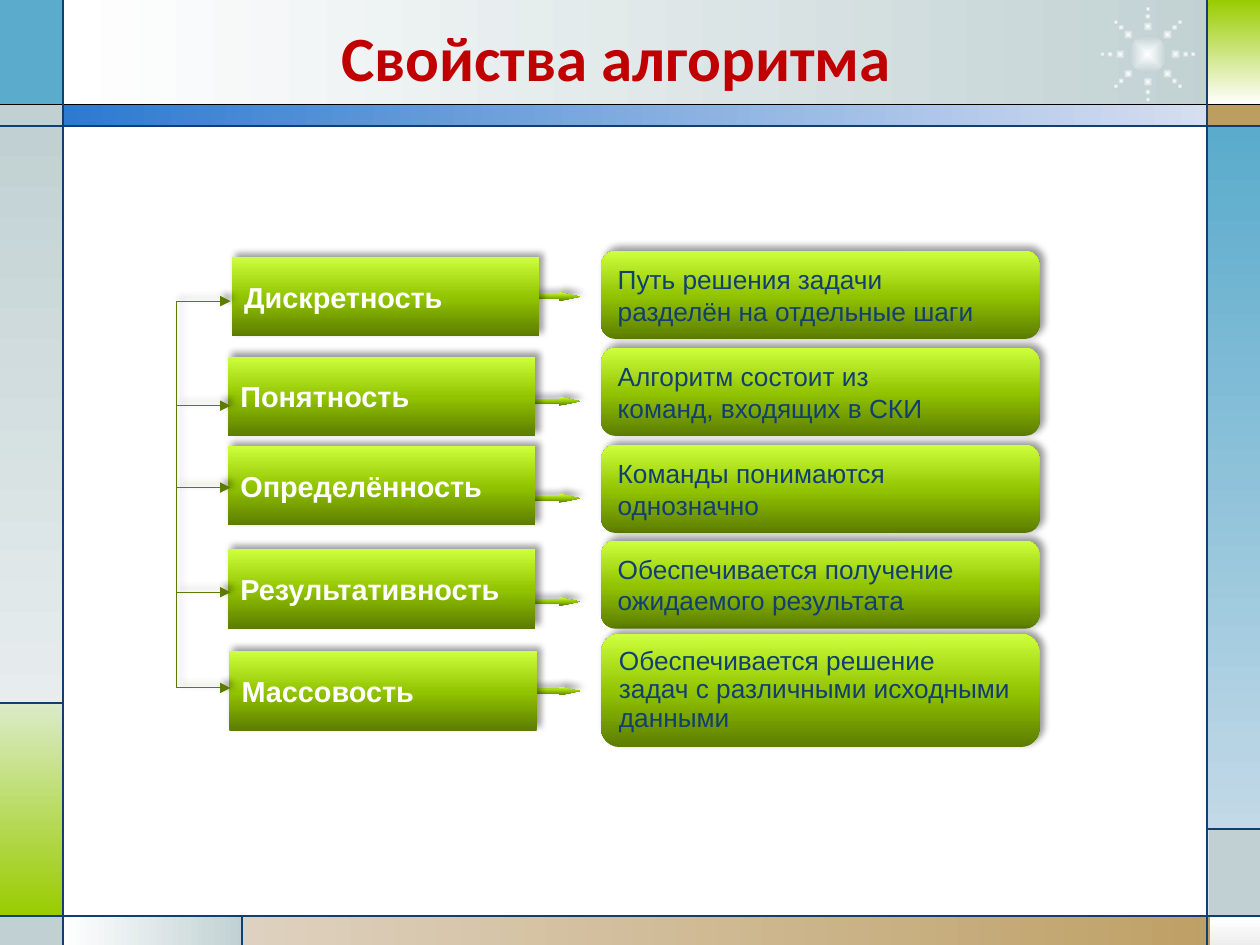
"""Build a slide that lists the properties of an algorithm."""
from math import cos, radians, sin

from lxml.etree import SubElement as Sub
from pptx import Presentation
from pptx.dml.color import RGBColor as RGB
from pptx.enum.shapes import MSO_CONNECTOR as LINK, MSO_SHAPE as KIND
from pptx.enum.text import MSO_ANCHOR as ANCHOR, PP_ALIGN as ALIGN
from pptx.oxml.ns import qn
from pptx.util import Inches, Pt

WHITE = RGB(0xFF, 0xFF, 0xFF)
BLACK = RGB(0x00, 0x00, 0x00)
GRAY = RGB(0xC1, 0xD1, 0xD3)
MIST = RGB(0xE7, 0xED, 0xEE)
PEARL = RGB(0xED, 0xED, 0xED)
SKY = RGB(0x5A, 0xAB, 0xCC)
PALE = RGB(0xC2, 0xD9, 0xE7)
BLUE = RGB(0x2D, 0x7A, 0xCF)
ICE = RGB(0xD7, 0xDE, 0xF0)
LIME = RGB(0x99, 0xCC, 0x00)
MINT = RGB(0xDB, 0xEB, 0xC9)
TAN = RGB(0xBD, 0x9E, 0x61)
SAND = RGB(0xDE, 0xD1, 0xBF)
NAVY = RGB(0x11, 0x3F, 0x71)
RED = RGB(0xC0, 0x00, 0x00)
MOSS = RGB(0x5C, 0x7C, 0x00)
LEAF = RGB(0x91, 0xC3, 0x00)
NEON = RGB(0xCD, 0xFF, 0x3C)

GREEN = [(0, MOSS), (48, LEAF), (100, NEON)]
GLOW = [(0, WHITE), (100, GRAY)]

PANELS = [
    (0.5, 0, 9.27, 0.84, (WHITE, GRAY), 0),
    (0, 0, 0.5, 0.84, (SKY,), 0),
    (0, 0.83, 0.5, 0.17, (GRAY,), 0),
    (0, 1, 0.5, 4.58, (GRAY, MIST), 90),
    (0, 5.58, 0.5, 1.69, (MINT, LIME), 90),
    (0, 7.28, 0.5, 0.23, (GRAY,), 0),
    (0.5, 7.27, 1.43, 0.24, (WHITE, GRAY), 0),
    (1.92, 7.27, 8.08, 0.24, (SAND, TAN), 0),
    (9.6, 7.28, 0.4, 0.23, (WHITE, PEARL), 90),
    (9.59, 6.58, 0.41, 0.7, (GRAY,), 0),
    (9.58, 1, 0.42, 5.58, (SKY, PALE), 90),
    (9.58, 0.83, 0.42, 0.17, (TAN,), 0),
    (9.59, 0, 0.41, 0.83, (LIME, WHITE), 90),
    (0.5, 0.83, 9.09, 0.17, (BLUE, ICE), 0),
]

RULES = [
    (0, 0.83, 10, 0.83, BLACK),
    (0, 1, 10, 1, NAVY),
    (0, 7.27, 10, 7.27, NAVY),
    (0.5, 0, 0.5, 7.5, NAVY),
    (9.58, 0, 9.58, 7.5, NAVY),
    (0.5, 5.58, 0, 5.58, NAVY),
    (1.92, 7.27, 1.92, 7.5, NAVY),
    (9.58, 6.58, 10, 6.58, NAVY),
]

NOTES = [
    (1.99, 0.7, "Путь решения задачи\nразделён на отдельные шаги", 1),
    (2.76, 0.7, "Алгоритм состоит из\nкоманд, входящих в СКИ", 1),
    (3.53, 0.7, "Команды понимаются\nоднозначно", 1),
    (4.29, 0.7, "Обеспечивается получение\nожидаемого результата", 1),
    (5.03, 0.9, "Обеспечивается решение\nзадач с различными исходными\nданными", 0.9),
]

LABELS = [
    (1.84, 2.04, "Дискретность"),
    (1.81, 2.83, "Понятность"),
    (1.81, 3.54, "Определённость"),
    (1.81, 4.36, "Результативность"),
    (1.82, 5.17, "Массовость"),
]

DARTS = [2.32, 3.15, 3.92, 4.74, 5.45]
TWIGS = [2.39, 3.22, 3.87, 4.7, 5.46]


def blend(shape, stops, angle=None):
    """Fill a shape with a linear gradient, or a radial one without an angle."""
    shape.fill.gradient()
    grad = shape.element.spPr.find(qn("a:gradFill"))
    for child in list(grad):
        grad.remove(child)
    group = Sub(grad, qn("a:gsLst"))
    for pos, color in stops:
        stop = Sub(group, qn("a:gs"), pos=str(pos * 1000))
        Sub(stop, qn("a:srgbClr"), val=str(color))
    if angle is None:
        ring = Sub(grad, qn("a:path"), path="shape")
        Sub(ring, qn("a:fillToRect"), dict.fromkeys("ltrb", "50000"))
    else:
        Sub(grad, qn("a:lin"), ang=str(angle * 60000), scaled="0")


def shade(item, cast):
    """Give an item a soft shadow, or none at all."""
    fx = Sub(item.element.spPr, qn("a:effectLst"))
    if cast:
        drop = Sub(fx, qn("a:outerShdw"), blurRad=str(Pt(4)), dist=str(Pt(3)),
                   dir=str(315 * 60000), algn="ctr", rotWithShape="0")
        tint = Sub(drop, qn("a:srgbClr"), val=str(BLACK))
        Sub(tint, qn("a:alpha"), val="40000")


def add_box(shapes, kind, box, stops, angle=None, cast=False):
    """Add a preset shape without an outline."""
    shape = shapes.add_shape(kind, *map(Inches, box))
    if len(stops) == 1:
        shape.fill.solid()
        shape.fill.fore_color.rgb = stops[0][1]
    else:
        blend(shape, stops, angle)
    shape.line.fill.background()
    shade(shape, cast)
    return shape


def add_line(shapes, ends, color, width, cast=False, head=False):
    """Add a straight line, with an arrowhead at its start if asked."""
    line = shapes.add_connector(LINK.STRAIGHT, *map(Inches, ends))
    line.line.color.rgb = color
    line.line.width = Pt(width)
    if head:
        Sub(line.line._get_or_add_ln(), qn("a:headEnd"), type="triangle")
    shade(line, cast)


def set_text(shape, text, size, color, face="Arial", bold=False, gap=1):
    """Write left-aligned paragraphs centred on the height of a shape."""
    frame = shape.text_frame
    frame.text = text
    frame.word_wrap = True
    frame.vertical_anchor = ANCHOR.MIDDLE
    for para in frame.paragraphs:
        para.alignment = ALIGN.LEFT
        para.line_spacing = gap
        for run in para.runs:
            font = run.font
            font.name, font.size, font.bold = face, Pt(size), bold
            font.color.rgb = color


def add_frame(shapes):
    """Draw the coloured panels of the border."""
    for *box, colors, angle in PANELS:
        stops = list(zip((0, 100), colors))
        add_box(shapes, KIND.RECTANGLE, box, stops, angle)


def add_spark(shapes):
    """Draw a glowing core with eight rays of three dots."""
    group = shapes.add_group_shape().shapes
    mid_x, mid_y = 9.11, 0.43

    def dot(x, y, size):
        """Add one round dot by its centre."""
        box = (x - size / 2, y - size / 2, size, size)
        add_box(group, KIND.OVAL, box, GLOW)

    dot(mid_x, mid_y, 0.3)
    for turn in range(0, 360, 45):
        for reach, size in ((0.3, 0.05), (0.36, 0.04), (0.22, 0.08)):
            dot(mid_x + reach * cos(radians(turn)),
                mid_y + reach * sin(radians(turn)), size)


def main():
    """Build and save the slide."""
    deck = Presentation()
    deck.slide_width, deck.slide_height = Inches(10), Inches(7.5)
    shapes = deck.slides.add_slide(deck.slide_layouts[6]).shapes

    add_frame(shapes)
    add_spark(shapes)
    for *ends, color in RULES:
        add_line(shapes, ends, color, 0.75)

    title = shapes.add_textbox(*map(Inches, (2.61, 0.31, 6.74, 0.35)))
    set_text(title, "Свойства алгоритма", 36, RED, "Calibri", True, 0.9)

    add_line(shapes, (1.4, TWIGS[-1], 1.4, TWIGS[0]), MOSS, 0.5, True)
    for top, high, text, gap in NOTES:
        box = (4.77, top, 3.48, high)
        note = add_box(shapes, KIND.ROUNDED_RECTANGLE, box, GREEN, 270, True)
        set_text(note, text, 15, NAVY, gap=gap)
    for top in DARTS:
        box = (4.17, top, 0.43, 0.07)
        dart = add_box(shapes, KIND.RIGHT_ARROW, box, GREEN, 270, True)
        dart.adjustments[1] = 2.32
    for left, top, text in LABELS:
        box = (left, top, 2.44, 0.63)
        label = add_box(shapes, KIND.RECTANGLE, box, GREEN, 270, True)
        set_text(label, text, 16.5, WHITE, bold=True)
    for y in TWIGS:
        add_line(shapes, (1.83, y, 1.4, y), MOSS, 0.5, True, True)

    deck.save("out.pptx")


if __name__ == "__main__":
    main()
